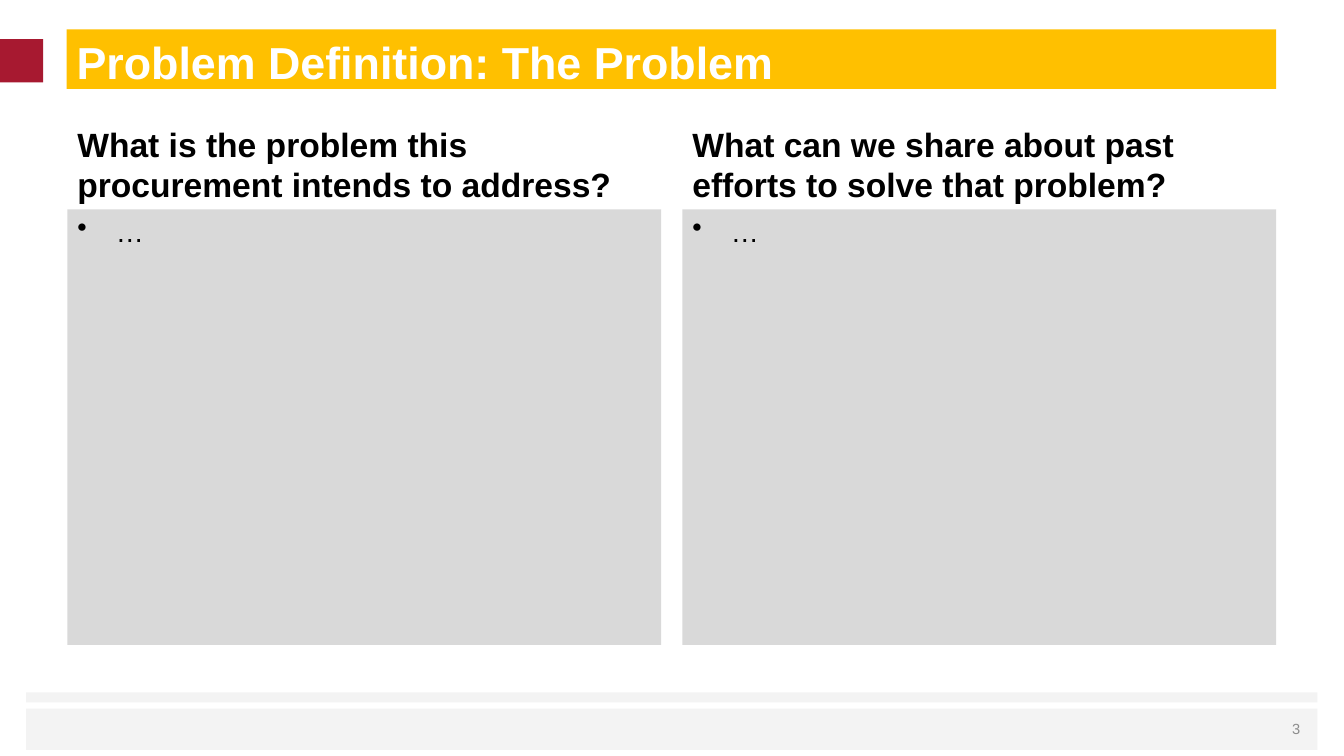
from lxml.etree import SubElement
from pptx import Presentation
from pptx.dml.color import RGBColor
from pptx.enum.shapes import MSO_SHAPE
from pptx.enum.text import MSO_ANCHOR, PP_ALIGN
from pptx.oxml.ns import qn
from pptx.util import Cm, Pt

# Content
TITLE = "Problem Definition: The Problem"
COLUMNS = [
    ("What is the problem this procurement intends to address?", ["…"]),
    ("What can we share about past efforts to solve that problem?", ["…"]),
]
NUMBER = "3"

COLORS = {
    "gold": "FFC000", "red": "A71930", "band": "F3F3F3", "panel": "D9D9D9",
    "black": "000000", "white": "FFFFFF", "gray": "8C8C8C",
}

# Layout in centimetres
LEFT, WIDTH, GAP = 1.7, 14.96, 0.54
HEAD_TOP, HEAD_H, PANEL_H = 3.18, 2.1, 10.97
INDENT = 0.97
BANDS = [(17.45, 0.25), (17.86, 1.04)]

deck = Presentation()
deck.slide_width, deck.slide_height = Cm(33.87), Cm(19.05)
slide = deck.slides.add_slide(deck.slide_layouts[6])


def color(name):
    return RGBColor.from_string(COLORS[name])


def add_rect(x, y, w, h, fill):
    rect = slide.shapes.add_shape(MSO_SHAPE.RECTANGLE, Cm(x), Cm(y), Cm(w), Cm(h))
    rect.shadow.inherit = False
    rect.fill.solid()
    rect.fill.fore_color.rgb = color(fill)
    rect.line.fill.background()
    return rect


def add_box(x, y, w, h):
    return slide.shapes.add_textbox(Cm(x), Cm(y), Cm(w), Cm(h))


def write(shape, lines, size, ink, bold=False, anchor=MSO_ANCHOR.TOP,
          align=PP_ALIGN.LEFT):
    frame = shape.text_frame
    frame.word_wrap = True
    frame.vertical_anchor = anchor
    frame.text = "\n".join(lines)
    for para in frame.paragraphs:
        para.alignment = align
        font = para.font
        font.name, font.size, font.bold = "Arial", Pt(size), bold
        font.color.rgb = color(ink)
    return frame


def add_bullet(para):
    props = para._p.get_or_add_pPr()
    props.set("marL", str(Cm(INDENT)))
    props.set("indent", str(-Cm(INDENT)))
    mark = SubElement(props, qn("a:buChar"))
    mark.set("char", "•")
    props.insert(0, mark)


# Footer bands and corner marker
for top, height in BANDS:
    add_rect(0.66, top, 32.54, height, "band")
add_rect(0, 0.99, 1.09, 1.09, "red")

# Question columns
for i, (question, points) in enumerate(COLUMNS):
    x = LEFT + i * (WIDTH + GAP + 0.13 * 0)
    write(add_box(x, HEAD_TOP, WIDTH, HEAD_H), [question], 24, "black",
          bold=True, anchor=MSO_ANCHOR.BOTTOM)
    panel = add_rect(x, HEAD_TOP + HEAD_H, WIDTH, PANEL_H, "panel")
    for para in write(panel, points, 20, "black").paragraphs:
        add_bullet(para)

# Slide number
write(add_box(31.12, 17.86, 1.9, 1.02), [NUMBER], 10.5, "gray",
      anchor=MSO_ANCHOR.MIDDLE, align=PP_ALIGN.RIGHT)

# Title bar
bar = write(add_rect(1.68, 0.74, 30.48, 1.5, "gold"), [TITLE], 32, "white", bold=True)
bar.margin_top, bar.margin_bottom = Cm(0.13), Cm(0)

deck.save("out.pptx")
